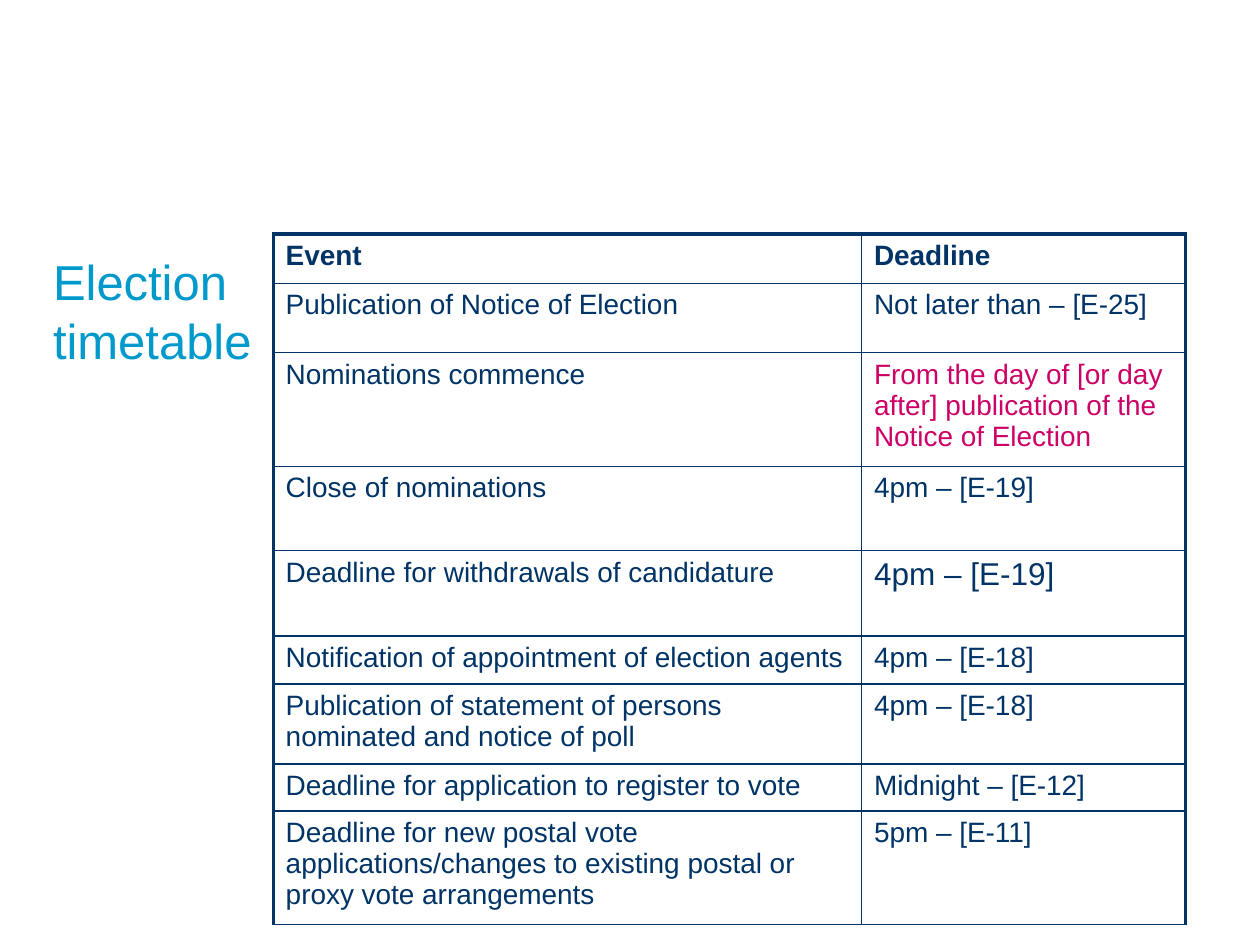
from pptx import Presentation
from pptx.dml.color import RGBColor
from pptx.enum import text
from pptx.oxml import parse_xml
from pptx.oxml.ns import nsdecls
from pptx.util import Cm, Pt

COLORS = {"title": "0099CC", "navy": "003366", "pink": "CC0066"}
FONT = "Arial"
TITLE = "Election timetable"
# event, deadline, row height in cm
ROWS = [
    ("Event", "Deadline", 0.99),
    ("Publication of Notice of Election", "Not later than – [E-25]", 1.4),
    ("Nominations commence",
     "From the day of [or day after] publication of the Notice of Election", 2.22),
    ("Close of nominations", "4pm – [E-19]", 1.7),
    ("Deadline for withdrawals of candidature", "4pm – [E-19]", 1.72),
    ("Notification of appointment of election agents", "4pm – [E-18]", 0.97),
    ("Publication of statement of persons nominated and notice of poll",
     "4pm – [E-18]", 1.56),
    ("Deadline for application to register to vote", "Midnight – [E-12]", 0.91),
    ("Deadline for new postal vote applications/changes to existing postal "
     "or proxy vote arrangements", "5pm – [E-11]", 2.22),
]
COLUMN_WIDTHS = (11.86, 6.53)
HEADER_ROW = 0
# cells that differ from the rest, by (row, column)
CELL_COLORS = {(2, 1): "pink"}
CELL_SIZES = {(4, 1): 18}
THIN, THICK = 1, 2.25


def style_text(tf, size, color, bold=False):
    for p in tf.paragraphs:
        for r in p.runs:
            r.font.name = FONT
            r.font.size = Pt(size)
            r.font.bold = bold
            r.font.color.rgb = RGBColor.from_string(COLORS[color])


def set_borders(cell, widths):
    """Draw cell borders; widths maps L, R, T and B to points."""
    props = cell._tc.get_or_add_tcPr()
    for i, (side, width) in enumerate(widths.items()):
        props.insert(i, parse_xml(
            f'<a:ln{side} {nsdecls("a")} w="{Pt(width)}"><a:solidFill>'
            f'<a:srgbClr val="{COLORS["navy"]}"/></a:solidFill></a:ln{side}>'))


def add_title(slide):
    tf = slide.shapes.add_textbox(Cm(1.07), Cm(5.08), Cm(6.98), Cm(11.86)).text_frame
    tf.margin_left = tf.margin_right = tf.margin_top = tf.margin_bottom = 0
    tf.word_wrap = True
    tf.vertical_anchor = text.MSO_ANCHOR.TOP
    tf.text = TITLE
    style_text(tf, 28, "title")


def add_timetable(slide):
    heights = [row[-1] for row in ROWS]
    table = slide.shapes.add_table(
        len(ROWS), len(COLUMN_WIDTHS), Cm(5.51), Cm(4.72),
        Cm(sum(COLUMN_WIDTHS)), Cm(sum(heights))).table
    table.first_row = table.horz_banding = False
    for column, width in zip(table.columns, COLUMN_WIDTHS):
        column.width = Cm(width)
    last_column = len(COLUMN_WIDTHS) - 1
    for i, (*texts, height) in enumerate(ROWS):
        table.rows[i].height = Cm(height)
        for j, label in enumerate(texts):
            cell = table.cell(i, j)
            cell.fill.background()
            cell.margin_left = cell.margin_right = Cm(0.25)
            cell.margin_top = cell.margin_bottom = Cm(0.13)
            cell.text_frame.text = label
            style_text(cell.text_frame, CELL_SIZES.get((i, j), 16),
                       CELL_COLORS.get((i, j), "navy"), i == HEADER_ROW)
            set_borders(cell, {
                "L": THICK if j == 0 else THIN,
                "R": THICK if j == last_column else THIN,
                "T": THICK if i == HEADER_ROW else THIN,
                "B": THIN,
            })


def main():
    prs = Presentation()
    prs.slide_width, prs.slide_height = Cm(25.4), Cm(19.05)
    s = prs.slides.add_slide(prs.slide_layouts[6])
    add_title(s)
    add_timetable(s)
    prs.save("out.pptx")


if __name__ == "__main__":
    main()
